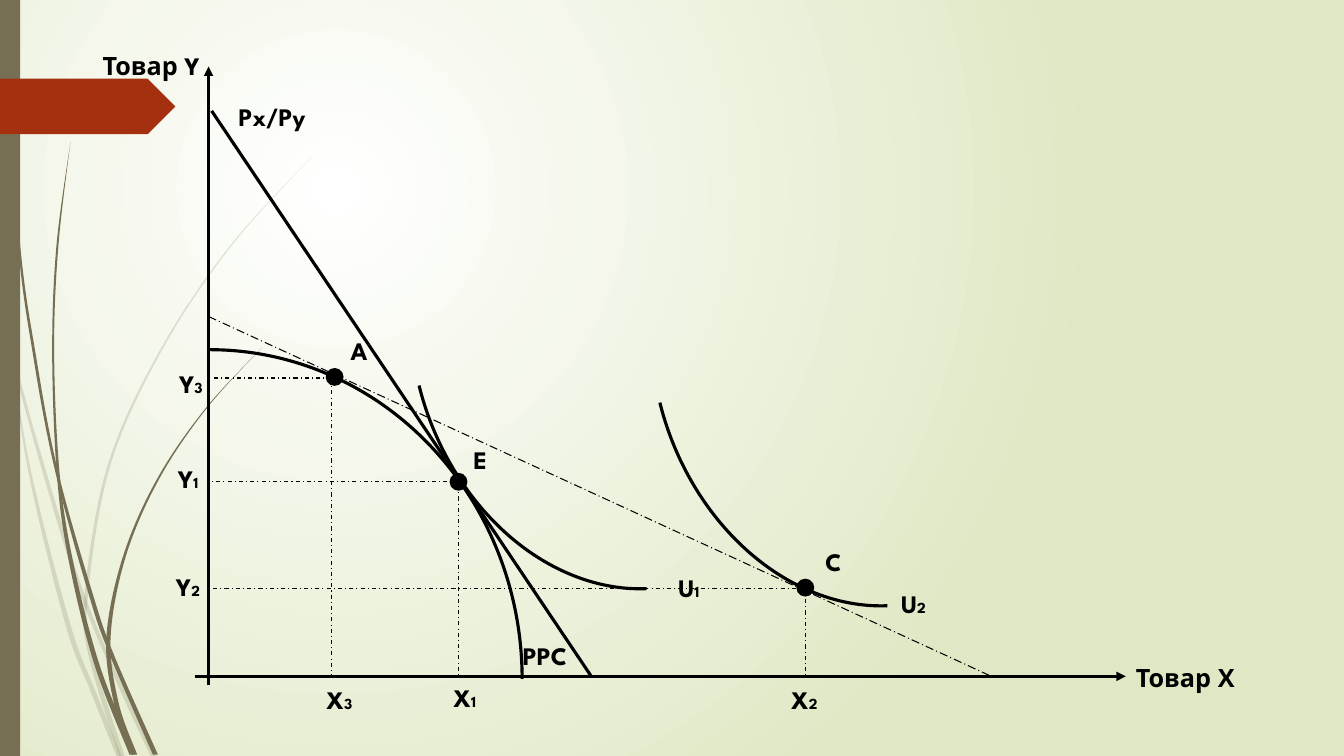
from dataclasses import dataclass

import lxml.etree
import pptx
import pptx.dml.color
import pptx.enum.dml
import pptx.enum.shapes
import pptx.enum.text
import pptx.oxml.ns
import pptx.shapes.autoshape
import pptx.slide
import pptx.util

COLORS = {"black": "000000", "white": "FFFFFF", "green": "DFE8C4", "olive": "766F54", "red": "A53010"}
FONT = "League Spartan"
DASH = pptx.enum.dml.MSO_LINE
SHAPE = pptx.enum.shapes.MSO_SHAPE
DOT_SIZE = 11.5
Point = tuple[float, float]
qn = pptx.oxml.ns.qn


@dataclass
class Wisp:
    opacity: int
    nodes: list[tuple[float, float, float]]


@dataclass
class Label:
    text: str
    left: float
    top: float
    index: str = ""
    width: float = 104.4


@dataclass
class Line:
    x1: float
    y1: float
    x2: float
    y2: float
    weight: float = 0.75
    dash: DASH | None = DASH.DASH_DOT
    arrow: bool = False


@dataclass
class Arc:
    left: float
    top: float
    width: float = 278.6
    height: float = 349.9
    rotation: float = 160.6
    angles: tuple[float, ...] = (168.63, 5.16)


WISPS = [
    Wisp(20, [(0.5, 209, 1), (15, 277, 2), (43, 375, 3), (62, 433, 3), (90, 499, 3), (109.5, 540, 3.6)]),
    Wisp(20, [(8, 252, 0), (21.5, 338, 2), (48.5, 446, 3.6), (67, 495, 3.6), (85, 540, 3.6)]),
    Wisp(20, [(224.6, 110, 0), (164.5, 176, 1), (114.5, 251, 1.5), (78, 332, 2), (62, 421, 2.5), (64, 465, 3), (87, 540, 4)]),
    Wisp(100, [(2.5, 0, 0.7), (13, 168, 1.5), (25, 256, 2), (40.5, 337, 2), (65, 425, 3), (80, 468, 3), (111, 539, 3.6)]),
    Wisp(100, [(50.4, 101, 0), (41, 176, 1.4), (38, 251, 1.4), (41.5, 337, 2), (50.5, 400, 3), (69, 474, 3.6), (94.5, 539, 4)]),
    Wisp(100, [(187.4, 248, 0), (147, 292, 0.8), (113, 342, 1.5), (89, 397, 2), (77.5, 455, 3), (83, 502, 3.4), (96, 539, 4)]),
]

LINES = [
    Line(149, 489.6, 149, 47.5, 2.25, None, True),
    Line(139, 483.1, 804.2, 483.1, 2.25, None, True),
    Line(151.2, 79.2, 421.9, 482.4, 2.25, None),
    Line(149, 226.1, 711.4, 484.6, dash=DASH.LONG_DASH_DOT),
    Line(327.6, 338.4, 327.6, 483.8),
    Line(327.6, 344.2, 149, 344.2),
    Line(236.9, 270.7, 236.9, 483.1),
    Line(236.9, 270, 151.9, 270),
    Line(575.3, 419.8, 575.3, 482.4),
    Line(576.7, 420.5, 151.2, 420.5),
]

ARCS = [Arc(-73.4, 249.8, 446.4, 470.2, 0, ()), Arc(297.4, 74.2), Arc(469.4, 86.4)]

DOTS = [(321.8, 338.4), (233.3, 263.5), (569.5, 414)]

LABELS = [
    Label("Товар Х", 804.2, 469.4),
    Label("Товар Y", 66.2, 32.4),
    Label("PPC", 366.5, 453.6, width=67),
    Label("Px/Py", 163.4, 69.1, width=67),
    Label("U", 477.4, 405.4, "1"),
    Label("U", 636.5, 416.9, "2"),
    Label("A", 243.4, 236.2),
    Label("E", 331.2, 313.9),
    Label("C", 582.5, 386.6),
    Label("X", 316.8, 483.8, "1"),
    Label("X", 558, 485.3, "2"),
    Label("X", 226.1, 485.3, "3"),
    Label("Y", 120.2, 327.6, "1"),
    Label("Y", 118.8, 404.6, "2"),
    Label("Y", 121, 259.9, "3"),
]


def color(name: str) -> pptx.dml.color.RGBColor:
    return pptx.dml.color.RGBColor.from_string(COLORS[name])


def paint_background(page: pptx.slide.Slide) -> None:
    fill = page.background.fill
    fill.gradient()
    for stop, name in zip(fill.gradient_stops, ("white", "green")):
        stop.color.rgb = color(name)
    gradient = page.element.find(".//" + qn("a:gradFill"))
    gradient.remove(gradient.find(qn("a:lin")))
    circle = lxml.etree.SubElement(gradient, qn("a:path"), {"path": "circle"})
    lxml.etree.SubElement(circle, qn("a:fillToRect"), {"l": "50000", "t": "50000", "r": "100000", "b": "100000"})


def fill_plain(shape: pptx.shapes.autoshape.Shape, name: str) -> None:
    shape.shadow.inherit = False
    shape.fill.solid()
    shape.fill.fore_color.rgb = color(name)
    shape.line.fill.background()


def smooth_edge(points: list[Point]) -> list[Point]:
    padded = [points[0], *points, points[-1]]
    curve = []
    for before, start, end, after in zip(padded, padded[1:], padded[2:], padded[3:]):
        curve.append((start[0] + (end[0] - before[0]) / 6, start[1] + (end[1] - before[1]) / 6))
        curve.append((end[0] - (after[0] - start[0]) / 6, end[1] - (after[1] - start[1]) / 6))
        curve.append(end)
    return curve


def draw_wisp(page: pptx.slide.Slide, wisp: Wisp) -> None:
    left = [(x - width / 2, y) for x, y, width in wisp.nodes]
    right = [(x + width / 2, y) for x, y, width in reversed(wisp.nodes)]
    outline = [left[0], *smooth_edge(left), left[-1], right[0], right[0], *smooth_edge(right)]
    points = [(pptx.util.Pt(x), pptx.util.Pt(y)) for x, y in outline]
    builder = page.shapes.build_freeform(*points[0])
    builder.add_line_segments(points[1:], close=True)
    ribbon = builder.convert_to_shape()
    fill_plain(ribbon, "olive")
    segments = ribbon.element.findall(".//" + qn("a:lnTo"))
    for first in range(0, len(segments) - 2, 3):
        curve = lxml.etree.Element(qn("a:cubicBezTo"))
        segments[first].addprevious(curve)
        for segment in segments[first:first + 3]:
            curve.append(segment[0])
            segment.getparent().remove(segment)
    if wisp.opacity < 100:
        tint = ribbon.element.spPr.find(qn("a:solidFill"))[0]
        lxml.etree.SubElement(tint, qn("a:alpha"), {"val": str(wisp.opacity * 1000)})


def draw_shape(page: pptx.slide.Slide, kind: SHAPE, left: float, top: float, width: float, height: float,
               name: str) -> pptx.shapes.autoshape.Shape:
    shape = page.shapes.add_shape(kind, *map(pptx.util.Pt, (left, top, width, height)))
    fill_plain(shape, name)
    return shape


def outline_black(shape: pptx.shapes.autoshape.Shape, weight: float) -> None:
    shape.line.color.rgb = color("black")
    shape.line.width = pptx.util.Pt(weight)


def draw_line(page: pptx.slide.Slide, line: Line) -> None:
    ends = map(pptx.util.Pt, (line.x1, line.y1, line.x2, line.y2))
    connector = page.shapes.add_connector(pptx.enum.shapes.MSO_CONNECTOR.STRAIGHT, *ends)
    outline_black(connector, line.weight)
    if line.dash:
        connector.line.dash_style = line.dash
    properties = connector.element.spPr
    if line.arrow:
        lxml.etree.SubElement(properties.find(qn("a:ln")), qn("a:tailEnd"), {"type": "triangle"})
    lxml.etree.SubElement(properties, qn("a:effectLst"))


def draw_arc(page: pptx.slide.Slide, arc: Arc) -> None:
    curve = draw_shape(page, SHAPE.ARC, arc.left, arc.top, arc.width, arc.height, "black")
    curve.fill.background()
    outline_black(curve, 2.25)
    curve.rotation = arc.rotation
    for number, angle in enumerate(arc.angles):
        curve.adjustments[number] = angle


def draw_label(page: pptx.slide.Slide, label: Label) -> None:
    box = page.shapes.add_textbox(*map(pptx.util.Pt, (label.left, label.top, label.width, 28.8)))
    box.text_frame.word_wrap = True
    box.text_frame.auto_size = pptx.enum.text.MSO_AUTO_SIZE.SHAPE_TO_FIT_TEXT
    para = box.text_frame.paragraphs[0]
    para.text = label.text
    if label.index:
        para.add_run().text = label.index
    for span, size in zip(para.runs, (18, 11)):
        span.font.name = FONT
        span.font.size = pptx.util.Pt(size)
        span.font.bold = True
        span.font.color.rgb = color("black")


def main() -> None:
    deck = pptx.Presentation()
    deck.slide_width, deck.slide_height = pptx.util.Pt(960), pptx.util.Pt(540)
    page = deck.slides.add_slide(deck.slide_layouts[6])
    paint_background(page)
    for wisp in WISPS:
        draw_wisp(page, wisp)
    draw_shape(page, SHAPE.RECTANGLE, 0, 0, 14.4, 540, "olive")
    draw_shape(page, SHAPE.PENTAGON, 0, 56.2, 125.3, 39.6, "red")
    for line in LINES:
        draw_line(page, line)
    for arc in ARCS:
        draw_arc(page, arc)
    for left, top in DOTS:
        outline_black(draw_shape(page, SHAPE.OVAL, left, top, DOT_SIZE, DOT_SIZE, "black"), 1.25)
    for label in LABELS:
        draw_label(page, label)
    deck.save("out.pptx")


if __name__ == "__main__":
    main()
